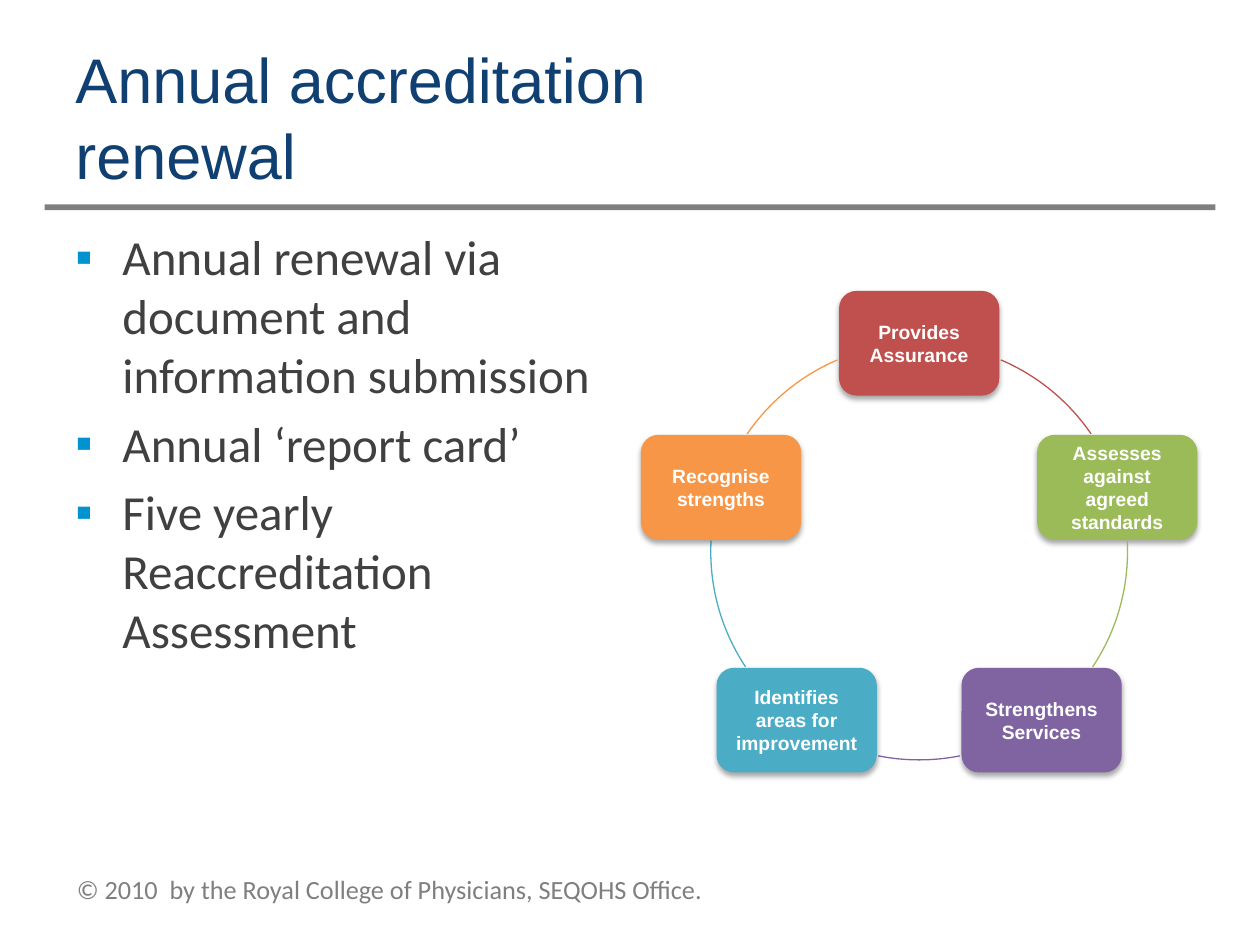
from math import cos, radians, sin

from lxml import etree
from pptx import Presentation
from pptx.dml.color import RGBColor
from pptx.enum.shapes import MSO_SHAPE
from pptx.enum.text import MSO_ANCHOR, PP_ALIGN
from pptx.oxml.ns import qn
from pptx.util import Cm, Pt

RECT, ROUNDED, ARC = MSO_SHAPE.RECTANGLE, MSO_SHAPE.ROUNDED_RECTANGLE, MSO_SHAPE.ARC
TOP, MIDDLE = MSO_ANCHOR.TOP, MSO_ANCHOR.MIDDLE
LEFT, CENTER = PP_ALIGN.LEFT, PP_ALIGN.CENTER

NAVY = RGBColor(0x10, 0x3F, 0x72)
DARK = RGBColor(0x40, 0x40, 0x40)
GRAY = RGBColor(0x7F, 0x7F, 0x7F)
WHITE = RGBColor(0xFF, 0xFF, 0xFF)
RED = RGBColor(0xC0, 0x50, 0x4D)
GREEN = RGBColor(0x9B, 0xBB, 0x59)
PURPLE = RGBColor(0x80, 0x64, 0xA2)
TEAL = RGBColor(0x4B, 0xAC, 0xC6)
ORANGE = RGBColor(0xF7, 0x96, 0x46)
BULLET_HEX = "0093D0"

TITLE = "Annual accreditation renewal"
BULLETS = [
    "Annual renewal via document and information submission",
    "Annual ‘report card’",
    "Five yearly Reaccreditation Assessment",
]
COPYRIGHT = "© 2010  by the Royal College of Physicians, SEQOHS Office."
STEPS = [
    ("Provides Assurance", RED, 293.1, 325.6),
    ("Assesses against agreed standards", GREEN, 357, 33.6),
    ("Strengthens Services", PURPLE, 78.7, 101.3),
    ("Identifies areas for improvement", TEAL, 146.4, 183),
    ("Recognise strengths", ORANGE, 214.4, 246.9),
]

TITLE_FONT = {"name": "Arial", "size": Pt(36)}
BODY_FONT = {"name": "Calibri", "size": Pt(28)}
FOOTER_FONT = {"name": "Calibri", "size": Pt(15)}
STEP_FONT = {"name": "Arial", "size": Pt(11), "bold": True}

CENTER_X, CENTER_Y, RADIUS = 18.53, 11.12, 4.2
BOX_W, BOX_H, BOX_INSET = 3.23, 2.11, 0.23


def write(tf, texts, font, color, anchor=TOP, align=LEFT):
    tf.word_wrap = True
    tf.vertical_anchor = anchor
    for i, text in enumerate(texts):
        p = tf.paragraphs[0] if i == 0 else tf.add_paragraph()
        p.alignment = align
        r = p.add_run()
        r.text = text
        for name, value in font.items():
            setattr(r.font, name, value)
        r.font.color.rgb = color


def add_text(slide, box, *args, **kwargs):
    s = slide.shapes.add_textbox(*map(Cm, box))
    write(s.text_frame, *args, **kwargs)
    return s.text_frame


def add_bullet(p):
    pPr = p._p.get_or_add_pPr()
    pPr.set("marL", str(Cm(0.95)))
    pPr.set("indent", str(-Cm(0.95)))
    color = etree.SubElement(pPr, qn("a:buClr"))
    etree.SubElement(color, qn("a:srgbClr"), val=BULLET_HEX)
    etree.SubElement(pPr, qn("a:buFont"), typeface="Arial")
    etree.SubElement(pPr, qn("a:buChar"), char="▪")


def add_filled(slide, kind, box, color):
    s = slide.shapes.add_shape(kind, *map(Cm, box))
    s.shadow.inherit = False
    s.fill.solid()
    s.fill.fore_color.rgb = color
    s.line.fill.background()
    return s


def add_shadow(s):
    effects = s._element.spPr.find(qn("a:effectLst"))
    shadow = etree.SubElement(effects, qn("a:outerShdw"), blurRad=str(Pt(3.1)),
                              dist=str(Pt(1.8)), dir="5400000", rotWithShape="0")
    color = etree.SubElement(shadow, qn("a:srgbClr"), val="000000")
    etree.SubElement(color, qn("a:alpha"), val="35000")


def add_step(slide, index, text, color, start, end):
    angle = radians(360 / len(STEPS) * index - 90)
    x = CENTER_X + RADIUS * cos(angle) - BOX_W / 2
    y = CENTER_Y + RADIUS * sin(angle) - BOX_H / 2
    s = add_filled(slide, ROUNDED, (x, y, BOX_W, BOX_H), color)
    add_shadow(s)
    tf = s.text_frame
    for side in ("left", "right", "top", "bottom"):
        setattr(tf, f"margin_{side}", Cm(BOX_INSET))
    write(tf, [text], STEP_FONT, WHITE, MIDDLE, CENTER)

    ring = (CENTER_X - RADIUS, CENTER_Y - RADIUS, 2 * RADIUS, 2 * RADIUS)
    arc = slide.shapes.add_shape(ARC, *map(Cm, ring))
    arc.shadow.inherit = False
    arc.fill.background()
    arc.line.color.rgb = color
    arc.line.width = Pt(0.75)
    for i, degrees in enumerate((start, end)):
        arc.adjustments[i] = degrees * 0.6


def main():
    prs = Presentation()
    prs.slide_width, prs.slide_height = Cm(25.4), Cm(19.05)
    slide = prs.slides.add_slide(prs.slide_layouts[6])

    add_text(slide, (1.3, 17.48, 13.59, 0.89), [COPYRIGHT], FOOTER_FONT, GRAY)
    add_filled(slide, RECT, (0.9, 4.12, 23.6, 0.12), GRAY)
    add_text(slide, (1.27, 0.76, 14.22, 3.18), [TITLE], TITLE_FONT, NAVY, anchor=MIDDLE)
    tf = add_text(slide, (1.27, 4.45, 11.23, 12.67), BULLETS, BODY_FONT, DARK)
    for i, p in enumerate(tf.paragraphs):
        add_bullet(p)
        p.space_before = Pt(5.6 if i else 0)
    for i, step in enumerate(STEPS):
        add_step(slide, i, *step)

    prs.save("out.pptx")


if __name__ == "__main__":
    main()
